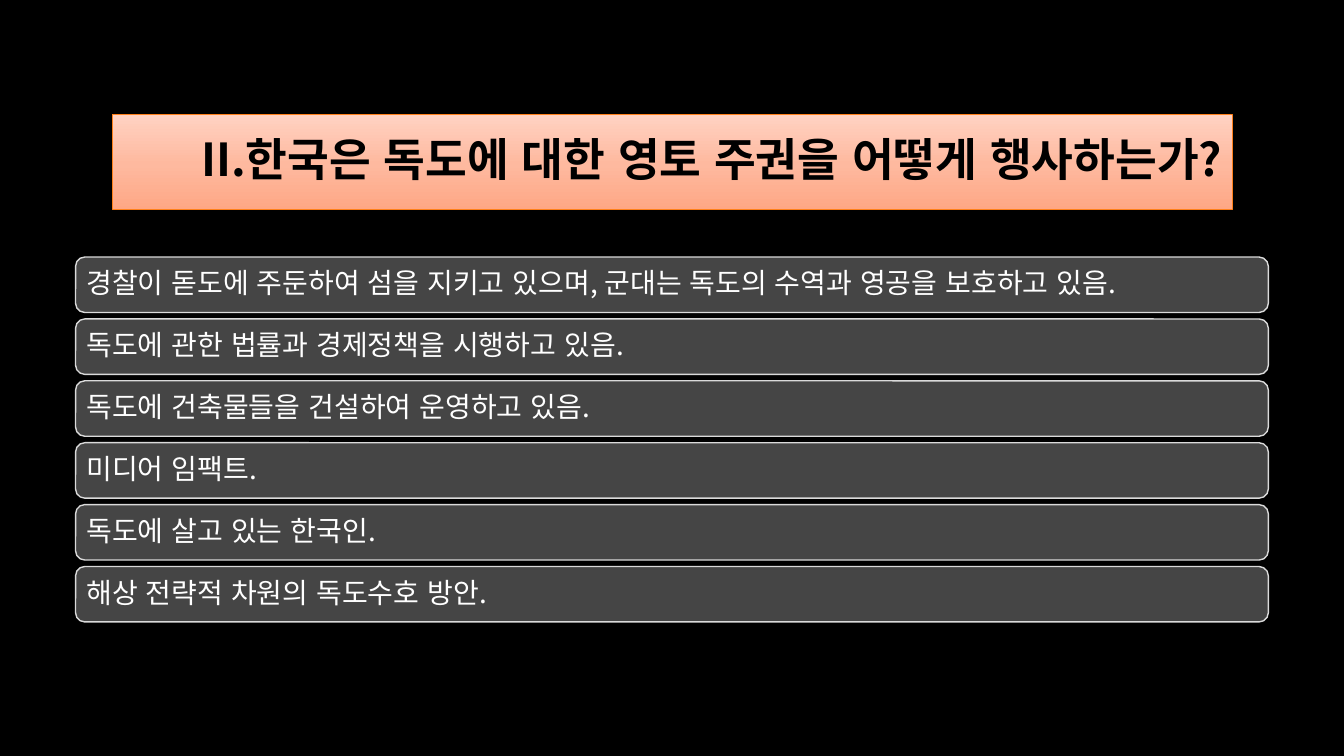
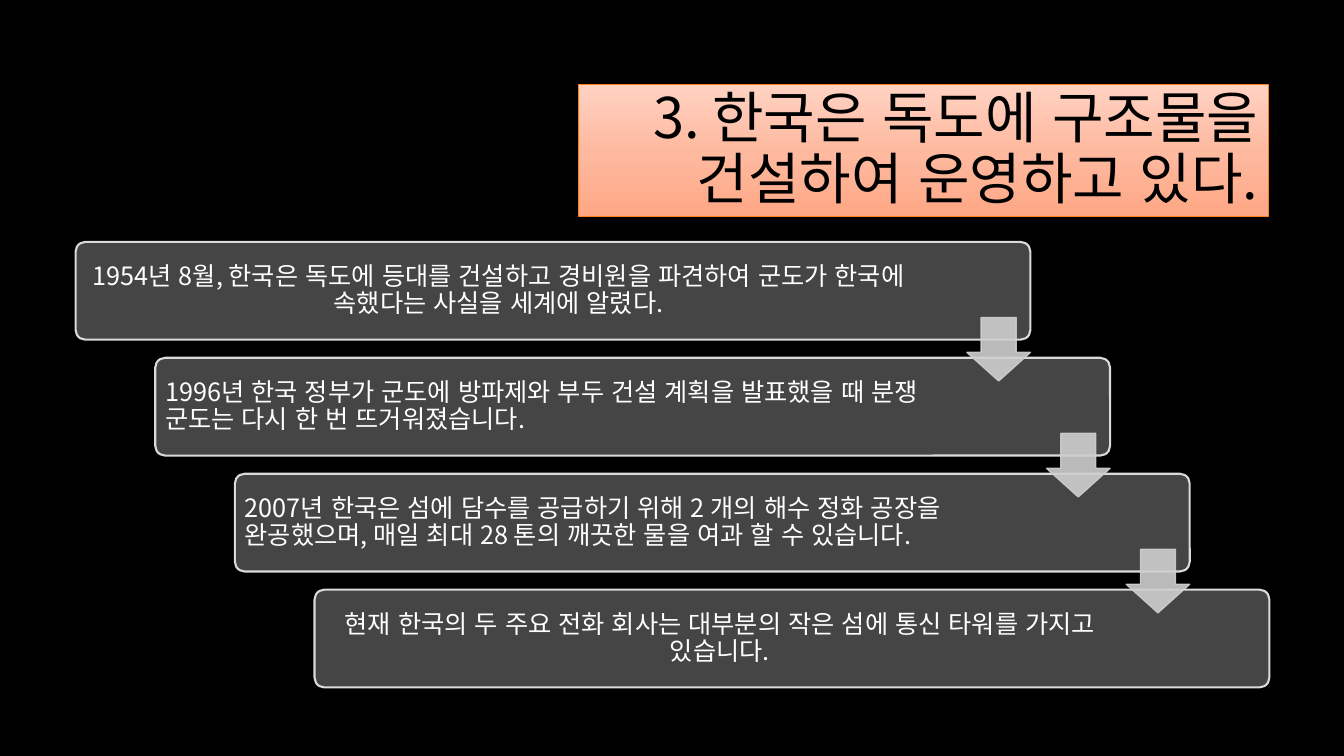
from dataclasses import dataclass

from lxml.etree import SubElement
from pptx import Presentation
from pptx.dml.color import RGBColor
from pptx.enum.lang import MSO_LANGUAGE_ID
from pptx.enum.shapes import MSO_SHAPE
from pptx.enum.text import MSO_ANCHOR, PP_ALIGN
from pptx.oxml.ns import qn
from pptx.presentation import Presentation as Deck
from pptx.shapes.autoshape import Shape
from pptx.slide import Slide
from pptx.util import Inches, Pt

FONT = "Noto Sans CJK KR"
BLACK = RGBColor(0x00, 0x00, 0x00)
WHITE = RGBColor(0xFF, 0xFF, 0xFF)
BAR_FILL = RGBColor(0x45, 0x45, 0x45)
BAR_LINE = RGBColor(0xDA, 0xDA, 0xDA)
ARROW_GRAY = RGBColor(0xCF, 0xCF, 0xCF)
TITLE_LINE = RGBColor(0xFE, 0x80, 0x1A)
TITLE_STOPS = (
    (0, RGBColor(0xFF, 0xD2, 0xC2)),
    (52, RGBColor(0xFE, 0xB9, 0x9F)),
    (100, RGBColor(0xFE, 0xA7, 0x85)),
)
ARROW_OPACITY = 90

LEFT = 0.75
CONTENT_WIDTH = 11.83

LIST_TOP, LIST_BOTTOM, LIST_BAR_HEIGHT = 2.55, 6.17, 0.55
LIST_INSET = 0.08

STEP_TOP, STEP_WIDTH, STEP_HEIGHT = 2.4, 9.47, 0.97
STEP_RIGHT, STEP_DOWN = 0.79, 1.15
STEP_INSET = 0.07
STEP_CORNER = 0.1
ARROW_SIZE, ARROW_DROP = 0.63, 0.75


@dataclass(frozen=True)
class Area:
    left: float
    top: float
    width: float
    height: float


@dataclass(frozen=True)
class TextStyle:
    size: float
    color: RGBColor = WHITE
    bold: bool = False
    align: PP_ALIGN = PP_ALIGN.LEFT


@dataclass(frozen=True)
class Step:
    text: str
    text_width: float
    align: PP_ALIGN = PP_ALIGN.LEFT


TOPICS = (
    "경찰이 돋도에 주둔하여 섬을 지키고 있으며, 군대는 독도의 수역과 영공을 보호하고 있음.",
    "독도에 관한 법률과 경제정책을 시행하고 있음.",
    "독도에 건축물들을 건설하여 운영하고 있음.",
    "미디어 임팩트.",
    "독도에 살고 있는 한국인.",
    "해상 전략적 차원의 독도수호 방안.",
)
STEPS = (
    Step("1954년 8월, 한국은 독도에 등대를 건설하고 경비원을 파견하여 군도가 "
         "한국에 속했다는 사실을 세계에 알렸다.", 8.33, PP_ALIGN.CENTER),
    Step("1996년 한국 정부가 군도에 방파제와 부두 건설 계획을 발표했을 때 분쟁 "
         "군도는 다시 한 번 뜨거워졌습니다.", 7.98),
    Step("2007년 한국은 섬에 담수를 공급하기 위해 2 개의 해수 정화 공장을 "
         "완공했으며, 매일 최대 28 톤의 깨끗한 물을 여과 할 수 있습니다.", 8),
    Step("현재 한국의 두 주요 전화 회사는 대부분의 작은 섬에 통신 타워를 가지고 "
         "있습니다.", 7.98, PP_ALIGN.CENTER),
)


def add_black_slide(deck: Deck) -> Slide:
    page = deck.slides.add_slide(deck.slide_layouts[6])
    page.background.fill.solid()
    page.background.fill.fore_color.rgb = BLACK
    return page


def add_outlined(page: Slide, kind: MSO_SHAPE, area: Area,
                 line: RGBColor, line_width: float) -> Shape:
    shape = page.shapes.add_shape(
        kind, Inches(area.left), Inches(area.top),
        Inches(area.width), Inches(area.height))
    shape.shadow.inherit = False
    shape.line.color.rgb = line
    shape.line.width = Pt(line_width)
    return shape


def write(shape: Shape, text: str, style: TextStyle) -> None:
    frame = shape.text_frame
    frame.word_wrap = True
    frame.vertical_anchor = MSO_ANCHOR.MIDDLE
    para = frame.paragraphs[0]
    para.alignment = style.align
    para.line_spacing = 0.9
    span = para.add_run()
    span.text = text
    font = span.font
    font.size = Pt(style.size)
    font.bold = style.bold
    font.color.rgb = style.color
    font.name = FONT
    font.language_id = MSO_LANGUAGE_ID.KOREAN
    SubElement(span._r.rPr, qn("a:ea"), typeface=FONT)


def add_title(page: Slide, area: Area, text: str, size: float,
              bold: bool = False) -> None:
    box = add_outlined(page, MSO_SHAPE.RECTANGLE, area, TITLE_LINE, 0.75)
    box.fill.gradient()
    box.fill.gradient_angle = 270
    stops = box._element.spPr.find(qn("a:gradFill")).find(qn("a:gsLst"))
    for stop in list(stops):
        stops.remove(stop)
    for percent, color in TITLE_STOPS:
        stop = SubElement(stops, qn("a:gs"), pos=str(percent * 1000))
        SubElement(stop, qn("a:srgbClr"), val=str(color))
    write(box, text, TextStyle(size, BLACK, bold, PP_ALIGN.RIGHT))


def add_bar(page: Slide, area: Area, text: str, style: TextStyle,
            line_width: float, inset: float) -> Shape:
    bar = add_outlined(page, MSO_SHAPE.ROUNDED_RECTANGLE, area,
                       BAR_LINE, line_width)
    bar.fill.solid()
    bar.fill.fore_color.rgb = BAR_FILL
    frame = bar.text_frame
    frame.margin_left = frame.margin_right = Inches(inset)
    frame.margin_top = frame.margin_bottom = Inches(inset)
    write(bar, text, style)
    return bar


def add_step(page: Slide, area: Area, step: Step) -> None:
    bar = add_bar(page, area, step.text, TextStyle(18, align=step.align),
                  1.5, STEP_INSET)
    bar.adjustments[0] = STEP_CORNER
    corner_inset = 0.03
    free_width = area.width - 2 * corner_inset - step.text_width
    bar.text_frame.margin_right = Inches(free_width + STEP_INSET)


def add_down_arrow(page: Slide, bar: Area) -> None:
    area = Area(bar.left + bar.width - ARROW_SIZE, bar.top + ARROW_DROP,
                ARROW_SIZE, ARROW_SIZE)
    arrow = add_outlined(page, MSO_SHAPE.DOWN_ARROW, area, ARROW_GRAY, 1)
    arrow.adjustments[0] = 0.55
    arrow.adjustments[1] = 0.45
    arrow.fill.solid()
    arrow.fill.fore_color.rgb = ARROW_GRAY
    for color in arrow._element.spPr.iter(qn("a:srgbClr")):
        SubElement(color, qn("a:alpha"), val=str(ARROW_OPACITY * 1000))


def build_topics(deck: Deck) -> None:
    page = add_black_slide(deck)
    add_title(page, Area(1.12, 1.14, 11.1, 0.94),
              "II.한국은 독도에 대한 영토 주권을 어떻게 행사하는가?", 32.4, bold=True)
    pitch = (LIST_BOTTOM - LIST_TOP - LIST_BAR_HEIGHT) / (len(TOPICS) - 1)
    for row, topic in enumerate(TOPICS):
        area = Area(LEFT, LIST_TOP + row * pitch,
                    CONTENT_WIDTH, LIST_BAR_HEIGHT)
        add_bar(page, area, topic, TextStyle(20), 1, LIST_INSET)


def build_steps(deck: Deck) -> None:
    page = add_black_slide(deck)
    add_title(page, Area(5.74, 0.84, 6.84, 1.31),
              "3. 한국은 독도에 구조물을 건설하여 운영하고 있다.", 40)
    areas = [Area(LEFT + row * STEP_RIGHT, STEP_TOP + row * STEP_DOWN,
                  STEP_WIDTH, STEP_HEIGHT) for row in range(len(STEPS))]
    for area, step in zip(areas, STEPS):
        add_step(page, area, step)
    for area in areas[:-1]:
        add_down_arrow(page, area)


def main() -> None:
    deck = Presentation()
    deck.slide_width = Inches(13.33)
    deck.slide_height = Inches(7.5)
    build_topics(deck)
    build_steps(deck)
    deck.save("out.pptx")


if __name__ == "__main__":
    main()
